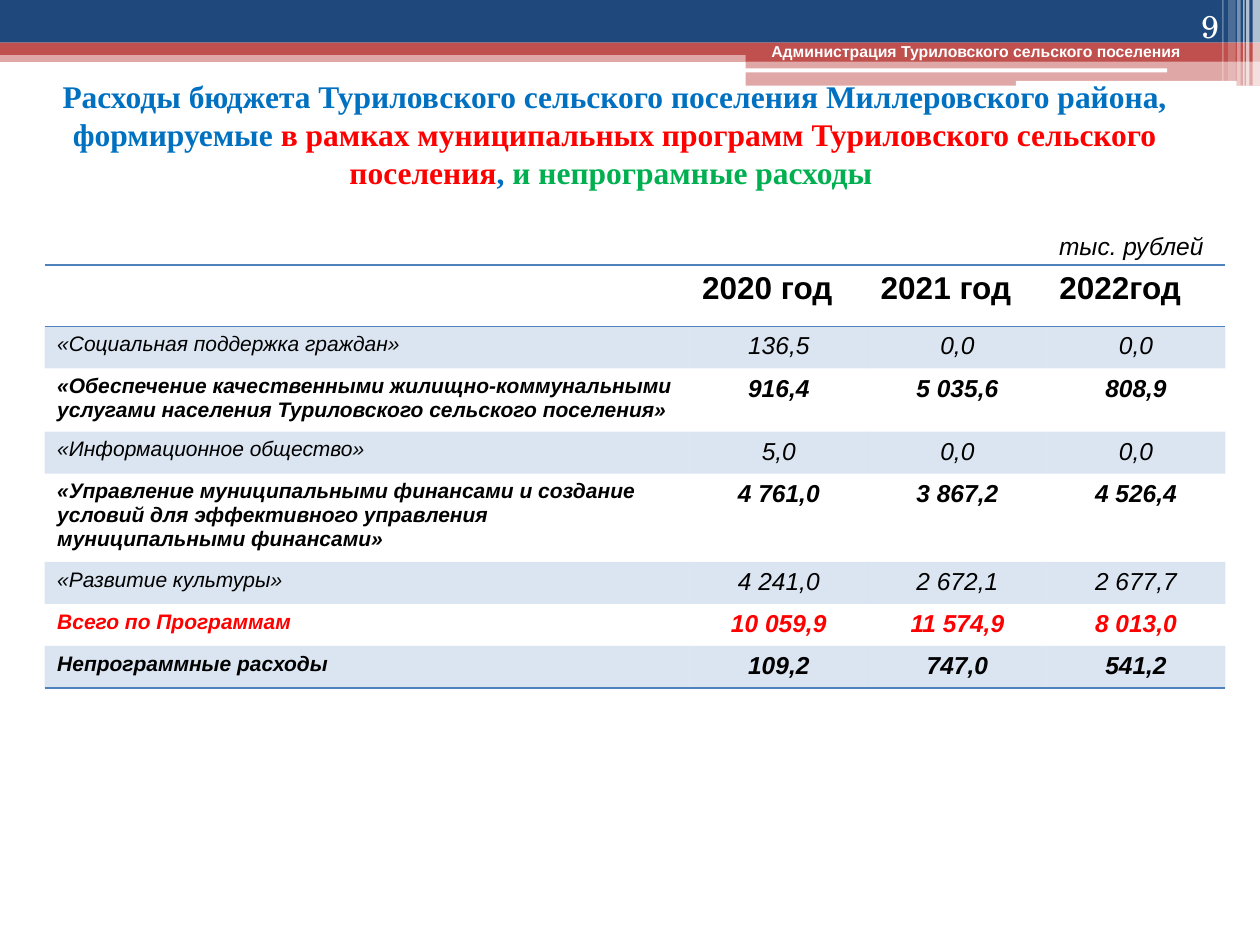
from dataclasses import dataclass

from pptx import Presentation
from pptx.dml.color import RGBColor
from pptx.enum.shapes import MSO_SHAPE
from pptx.enum.text import MSO_ANCHOR, MSO_AUTO_SIZE, PP_ALIGN
from pptx.oxml import parse_xml
from pptx.oxml.ns import nsdecls, qn
from pptx.util import Cm, Pt

RECT, ROUND = MSO_SHAPE.RECTANGLE, MSO_SHAPE.ROUNDED_RECTANGLE
LEFT, CENTER, RIGHT = PP_ALIGN.LEFT, PP_ALIGN.CENTER, PP_ALIGN.RIGHT
TOP, BOTTOM = MSO_ANCHOR.TOP, MSO_ANCHOR.BOTTOM
PLAIN_TABLE = "{2D5ABB26-0587-4C30-8999-92F81FD0307C}"


@dataclass(frozen=True)
class Theme:
    navy: str = "1F497D"
    brick: str = "C0504D"
    steel: str = "4F81BD"
    white: str = "FFFFFF"
    black: str = "000000"
    blue: str = "0070C0"
    red: str = "FF0000"
    green: str = "00B050"
    body: str = "Arial"
    heading: str = "Times New Roman"
    number: str = "TeX Gyre Schola"
    large: int = 18
    medium: int = 14
    small: int = 12
    tiny: int = 9


class SlideBuilder:
    def __init__(self, prs, theme):
        self.theme = theme
        self.s = prs.slides.add_slide(prs.slide_layouts[5])

    def fill(self, fill, props, color, opacity=100):
        fill.solid()
        fill.fore_color.rgb = RGBColor.from_string(color)
        if opacity < 100:
            clr = props.find(qn("a:solidFill")).find(qn("a:srgbClr"))
            clr.append(parse_xml(f'<a:alpha {nsdecls("a")} val="{opacity * 1000}"/>'))

    def run(self, p, text, color, **formats):
        r = p.add_run()
        r.text = text
        r.font.color.rgb = RGBColor.from_string(color)
        for name, value in formats.items():
            setattr(r.font, name, Pt(value) if name == "size" else value)

    def bar(self, x, y, w, h, color, opacity=100, kind=RECT):
        sp = self.s.shapes.add_shape(kind, Cm(x), Cm(y), Cm(w), Cm(h))
        sp.shadow.inherit = False
        sp.line.fill.background()
        self.fill(sp.fill, sp.element.spPr, color, opacity)

    def text(self, x, y, w, h, text, color, align=LEFT, anchor=TOP, **formats):
        sp = self.s.shapes.add_textbox(Cm(x), Cm(y), Cm(w), Cm(h))
        tf = sp.text_frame
        tf.word_wrap = True
        tf.vertical_anchor = anchor
        p = tf.paragraphs[0]
        p.alignment = align
        self.run(p, text, color, **formats)

    def title(self, x, y, w, h, parts):
        sp = self.s.shapes.title
        self.s.shapes.element.append(sp.element)  # bring in front of the bands
        sp.left, sp.top, sp.width, sp.height = Cm(x), Cm(y), Cm(w), Cm(h)
        tf = sp.text_frame
        tf.auto_size = MSO_AUTO_SIZE.NONE
        tf.vertical_anchor = TOP
        p = tf.paragraphs[0]
        p.alignment = CENTER
        for text, color in parts:
            self.run(p, text, color, size=self.theme.large, bold=True,
                     name=self.theme.heading)

    def border(self, cell, *sides):
        for side in sides:
            cell._tc.get_or_add_tcPr().insert(0, parse_xml(
                f'<a:{side} {nsdecls("a")} w="12700"><a:solidFill>'
                f'<a:srgbClr val="{self.theme.steel}"/></a:solidFill></a:{side}>'))

    def table(self, x, y, widths, heights, header, rows):
        t = self.theme
        frame = self.s.shapes.add_table(len(heights), len(widths), Cm(x), Cm(y),
                                        Cm(sum(widths)), Cm(sum(heights)))
        tbl = frame.table
        tbl.first_row = tbl.horz_banding = False
        frame.element.find(".//" + qn("a:tableStyleId")).text = PLAIN_TABLE
        for col, width in zip(tbl.columns, widths):
            col.width = Cm(width)
        for row, height in zip(tbl.rows, heights):
            row.height = Cm(height)

        # Header row; its first cell stays empty
        for j, text in enumerate(header):
            cell = tbl.cell(0, j)
            cell.fill.background()
            if text:
                self.run(cell.text_frame.paragraphs[0], text, t.black,
                         size=t.large, bold=True, name=t.body)
            self.border(cell, "lnB", "lnT")

        # Body rows, tinted on every odd row
        for i, (values, color, bold) in enumerate(rows, 1):
            for j, text in enumerate(values):
                cell = tbl.cell(i, j)
                p = cell.text_frame.paragraphs[0]
                p.alignment = CENTER if j else LEFT
                self.run(p, text, color, size=t.medium if j else t.small,
                         bold=bold, italic=True, name=t.body)
                if i % 2:
                    self.fill(cell.fill, cell._tc.get_or_add_tcPr(), t.steel, 20)
                else:
                    cell.fill.background()
                if i == len(rows):
                    self.border(cell, "lnB")


def main():
    prs = Presentation()
    prs.slide_width, prs.slide_height = Cm(25.4), Cm(19.05)
    t = Theme()
    b = SlideBuilder(prs, t)

    # Header bands
    b.bar(0, 1.02, 25.4, 0.23, t.brick, 50)
    b.bar(0, 0, 25.4, 0.86, t.navy)
    b.bar(0, 0.86, 25.4, 0.25, t.brick)
    b.bar(15.03, 0.99, 10.37, 0.25, t.brick)
    b.bar(15.03, 1.23, 10.37, 0.5, t.brick, 50)
    b.bar(15.02, 1.38, 8.51, 0.08, t.white, kind=ROUND)
    b.bar(20.48, 1.63, 4.45, 0.1, t.white, kind=ROUND)

    # Vertical stripes at the right edge
    for x, w, h, opacity in [(25.25, 0.15, 1.73, 65), (25.12, 0.07, 1.73, 65),
                             (25.06, 0.03, 1.73, 60), (24.94, 0.07, 1.73, 40),
                             (24.76, 0.15, 1.63, 20), (24.64, 0.03, 1.63, 30)]:
        b.bar(x, 0, w, h, t.white, opacity)

    # Header text, title and slide number
    b.text(15.3, 0.71, 9, 0.63, "Администрация Туриловского сельского поселения",
           t.white, size=t.tiny, bold=True, name=t.body)
    b.title(0, 1.43, 24.79, 3.2, [
        ("Расходы бюджета Туриловского сельского поселения Миллеровского района, "
         "формируемые ", t.blue),
        ("в рамках муниципальных программ Туриловского сельского поселения", t.red),
        (", ", t.blue),
        ("и непрограмные расходы ", t.green)])
    b.text(22.71, 0, 2.11, 1.02, "9", t.white, RIGHT, BOTTOM,
           size=t.large, name=t.number)

    # Spending table; body rows grow to fit their text
    b.table(0.9, 5.34, [13] + [3.6] * 3, [1.24] + [0.4] * 7,
            ["", "2020 год", "2021 год", "2022год"], [
        (["«Социальная поддержка граждан»", "136,5", "0,0", "0,0"], t.black, False),
        (["«Обеспечение качественными жилищно-коммунальными услугами населения "
          "Туриловского сельского поселения»", "916,4", "5 035,6", "808,9"],
         t.black, True),
        (["«Информационное общество»", "5,0", "0,0", "0,0"], t.black, False),
        (["«Управление муниципальными финансами и создание условий для эффективного "
          "управления муниципальными финансами»", "4 761,0", "3 867,2", "4 526,4"],
         t.black, True),
        (["«Развитие культуры»", "4 241,0", "2 672,1", "2 677,7"], t.black, False),
        (["Всего по Программам", "10 059,9", "11 574,9", "8 013,0"], t.red, True),
        (["Непрограммные расходы", "109,2", "747,0", "541,2"], t.black, True)])

    # Unit of measure
    b.text(21.1, 4.54, 3.61, 0.86, "тыс. рублей", t.black,
           size=t.medium, italic=True, name=t.body)

    prs.save("out.pptx")


if __name__ == "__main__":
    main()
